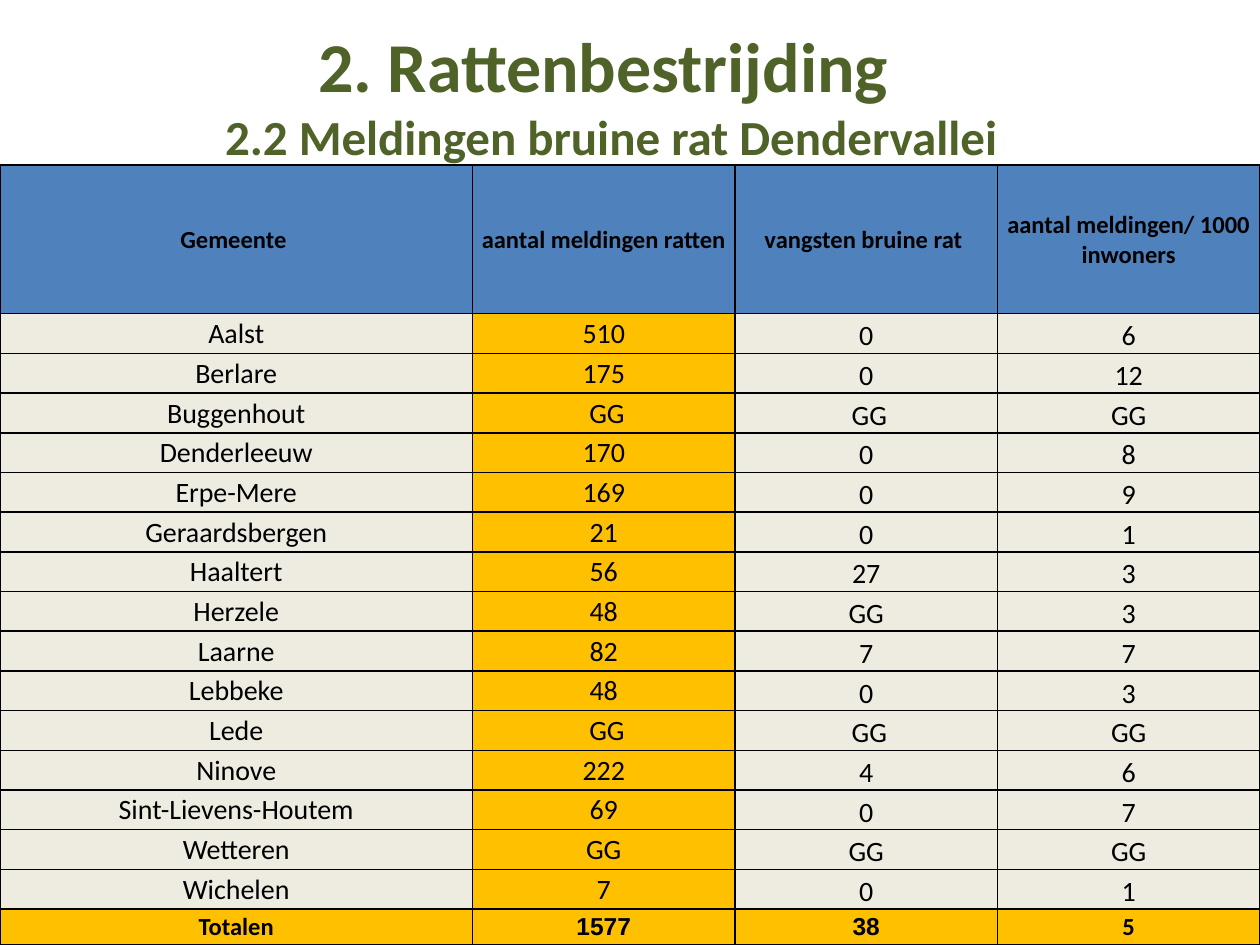
from pptx import Presentation
from pptx.dml.color import RGBColor
from pptx.enum.text import MSO_ANCHOR, PP_ALIGN
from pptx.oxml import parse_xml
from pptx.oxml.ns import nsdecls
from pptx.util import Inches, Pt

COLORS = {
    "title": "4F6228", "text": "000000", "head": "4F81BD",
    "body": "EEECE1", "mark": "FFC000", "line": "000000",
}
HEADS = ["Gemeente ", "aantal meldingen ratten", "vangsten bruine rat ",
         "aantal meldingen/ 1000 inwoners"]
TOWNS = [
    ("Aalst", "510", "0", "6"),
    ("Berlare", "175", "0", "12"),
    ("Buggenhout", " GG", " GG", "GG"),
    ("Denderleeuw", "170", "0", "8"),
    ("Erpe-Mere", "169", "0", "9"),
    ("Geraardsbergen", "21", "0", "1"),
    ("Haaltert", "56", "27", "3"),
    ("Herzele", "48", "GG", "3"),
    ("Laarne", "82", "7", "7"),
    ("Lebbeke", "48", "0", "3"),
    ("Lede", " GG", " GG", "GG"),
    ("Ninove", "222", "4", "6"),
    ("Sint-Lievens-Houtem", "69", "0", "7"),
    ("Wetteren", "GG", "GG", "GG"),
    ("Wichelen", "7", "0", "1"),
]
TOTALS = ["Totalen", "1577", "38", "5"]


class Deck:
    """Holds the text style and the current slide."""

    font = "Calibri"

    def __init__(self, width, height):
        self.prs = Presentation()
        self.prs.slide_width = Inches(width)
        self.prs.slide_height = Inches(height)
        self.slide = self.prs.slides.add_slide(self.prs.slide_layouts[6])

    def label(self, para, text, color="text", **style):
        """Add one centred run; style overrides the font defaults."""
        para.alignment = PP_ALIGN.CENTER
        run = para.add_run()
        run.text = text
        for key, value in {"name": self.font, "bold": False, **style}.items():
            setattr(run.font, key, value)
        run.font.color.rgb = RGBColor.from_string(COLORS[color])

    def title(self, lines, left, top, width, height):
        box = self.slide.shapes.add_textbox(
            Inches(left), Inches(top), Inches(width), Inches(height))
        frame = box.text_frame
        frame.word_wrap = True
        for i, (text, size) in enumerate(lines):
            para = frame.add_paragraph() if i else frame.paragraphs[0]
            self.label(para, text, "title", size=Pt(size), bold=True)

    def table(self, left, top, cols, rows):
        """Add an empty table from column widths and row heights."""
        frame = self.slide.shapes.add_table(
            len(rows), len(cols), Inches(left), Inches(top),
            Inches(sum(cols)), Inches(sum(rows)))
        grid = frame.table
        grid.first_row = grid.horz_banding = False
        for col, width in zip(grid.columns, cols):
            col.width = Inches(width)
        for row, height in zip(grid.rows, rows):
            row.height = Inches(height)
        return grid

    def cell(self, cell, text, fill, anchor=MSO_ANCHOR.MIDDLE, **style):
        edge = Inches(0.01)
        form = {"margin_left": edge, "margin_right": edge, "margin_top": edge,
                "margin_bottom": 0, "vertical_anchor": anchor}
        for key, value in form.items():
            setattr(cell, key, value)
        self.border(cell)
        cell.fill.solid()
        cell.fill.fore_color.rgb = RGBColor.from_string(COLORS[fill])
        self.label(cell.text_frame.paragraphs[0], text, **style)

    def border(self, cell):
        props = cell._tc.get_or_add_tcPr()
        for side in "LRTB":
            props.append(parse_xml(
                f'<a:ln{side} {nsdecls("a")} w="{Pt(1)}"><a:solidFill>'
                f'<a:srgbClr val="{COLORS["line"]}"/></a:solidFill></a:ln{side}>'))


def main():
    deck = Deck(10, 7.5)
    deck.title([("2. Rattenbestrijding ", 40),
                ("2.2 Meldingen bruine rat Dendervallei", 28)],
               0.35, 0.13, 9, 5.42)

    first, top, head, foot = 3.75, 1.31, 1.18, 0.28
    cols = [first] + [(10 - first) / 3] * 3
    step = (7.5 - top - head - foot) / len(TOWNS)
    grid = deck.table(0, top, cols, [head] + [step] * len(TOWNS) + [foot])

    strong = {"size": Pt(14), "bold": True}
    last = len(TOWNS) + 1
    for c, text in enumerate(HEADS):
        deck.cell(grid.cell(0, c), text, "head", **strong)
    for r, town in enumerate(TOWNS, 1):
        for c, text in enumerate(town):
            fill = "mark" if c == 1 else "body"
            anchor = MSO_ANCHOR.BOTTOM if c > 1 else MSO_ANCHOR.MIDDLE
            deck.cell(grid.cell(r, c), text, fill, anchor, size=Pt(16))
    for c, text in enumerate(TOTALS):
        name = "Arial" if c in (1, 2) else deck.font
        deck.cell(grid.cell(last, c), text, "mark", name=name, **strong)

    deck.prs.save("out.pptx")


if __name__ == "__main__":
    main()
